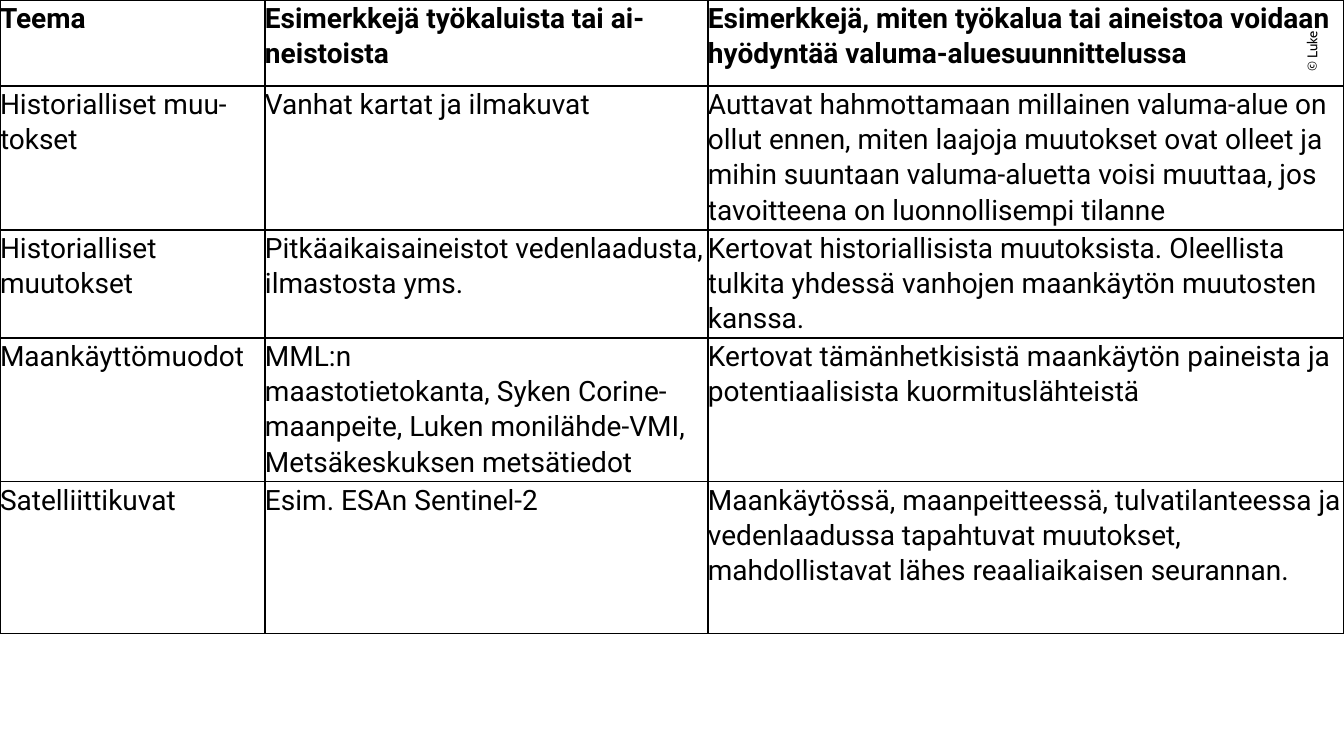
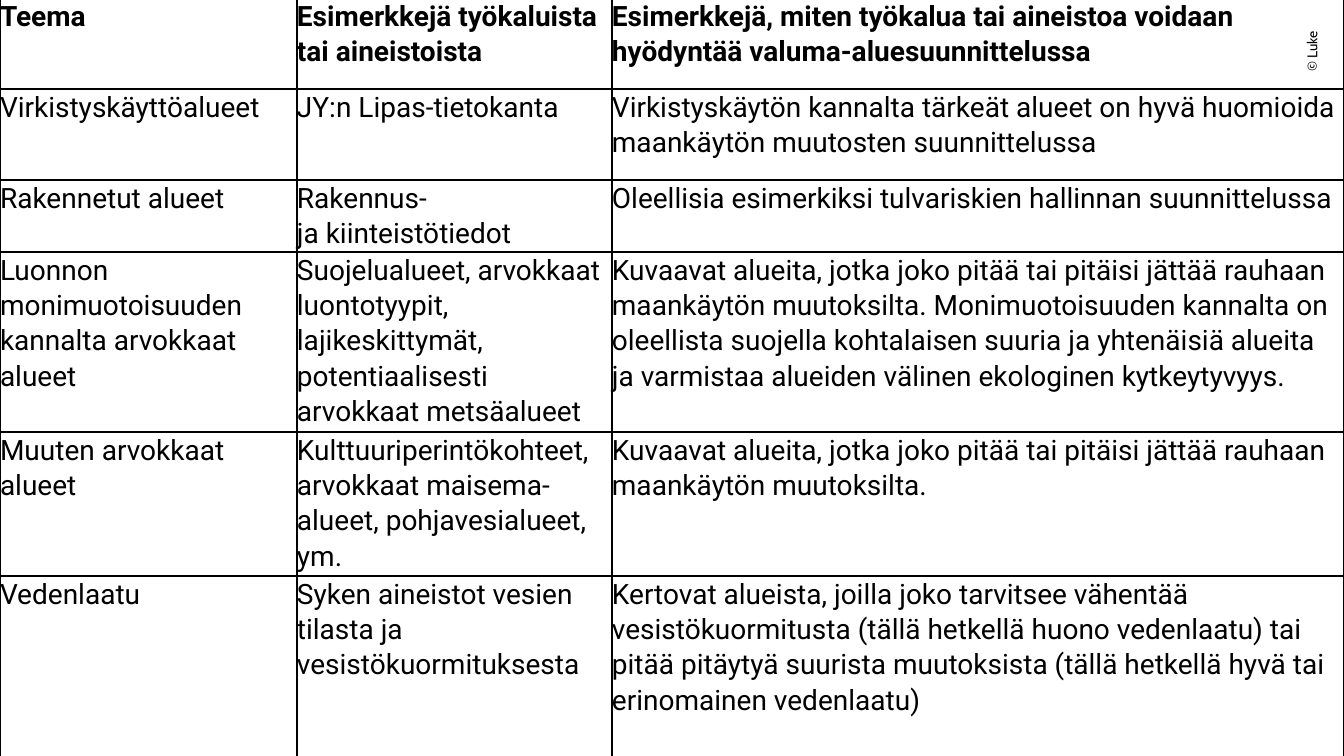
from lxml.etree import SubElement
from pptx import Presentation
from pptx.dml.color import RGBColor
from pptx.enum.text import MSO_ANCHOR, MSO_AUTO_SIZE, PP_ALIGN as Align
from pptx.oxml.ns import qn
from pptx.util import Emu, Pt

PX = 914400 / 100.8
SLIDE_W, SLIDE_H = 1344, 756
NBSP = chr(160)


class Theme:
    ink = "000000"
    paper = "FFFFFF"
    body_font, credit_font = "Roboto", "Cabin"
    body_size, credit_size = 20, 10
    border = 1
    line_spacing, space_after = 1.07, 8


# Content: "~" stands for a non-breaking space
CREDIT = "© Luke"
CREDIT_BOX = (1258, 62, 108, 27)
USE_HEADING = "Esimerkkejä, miten työkalua tai aineistoa voidaan hyödyntää valuma-aluesuunnittelussa"

TABLES = [
    {
        "top": 0,
        "cols": [265, 443, 636],
        "heights": [86, 144, 108, 143, 152],
        "rows": [
            ("Teema", "Esimerkkejä työkaluista tai ai-neistoista", USE_HEADING),
            ("Historialliset muu-tokset", "Vanhat kartat ja ilmakuvat",
             "Auttavat hahmottamaan millainen valuma-alue on ollut ennen, miten laajoja "
             "muutokset ovat olleet ja mihin suuntaan valuma-aluetta voisi muuttaa, jos "
             "tavoitteena on luonnollisempi tilanne"),
            ("Historialliset muutokset", "Pitkäaikaisaineistot vedenlaadusta, ilmastosta yms.",
             "Kertovat historiallisista muutoksista. Oleellista tulkita yhdessä vanhojen "
             "maankäytön muutosten kanssa."),
            ("Maankäyttömuodot",
             "MML:n maastotietokanta,~Syken~Corine-maanpeite, Luken monilähde-VMI, "
             "Metsäkeskuksen metsätiedot",
             "Kertovat tämänhetkisistä maankäytön paineista ja potentiaalisista "
             "kuormituslähteistä"),
            ("Satelliittikuvat", "Esim. ESAn Sentinel-2",
             "Maankäytössä, maanpeitteessä, tulvatilanteessa ja vedenlaadussa tapahtuvat "
             "muutokset, mahdollistavat lähes reaaliaikaisen seurannan."),
        ],
    },
    {
        "top": -2,
        "cols": [297, 315, 732],
        "heights": [91, 91, 72, 180, 144, 183],
        "rows": [
            ("Teema", "Esimerkkejä työkaluista tai aineistoista", USE_HEADING),
            ("Virkistyskäyttöalueet", "JY:n Lipas-tietokanta",
             "Virkistyskäytön kannalta tärkeät alueet on hyvä huomioida maankäytön "
             "muutosten suunnittelussa"),
            ("Rakennetut alueet", "Rakennus- ja~kiinteistötiedot",
             "Oleellisia esimerkiksi tulvariskien hallinnan suunnittelussa"),
            ("Luonnon monimuotoisuuden kannalta arvokkaat alueet",
             "Suojelualueet, arvokkaat luontotyypit, lajikeskittymät, potentiaalisesti "
             "arvokkaat metsäalueet",
             "Kuvaavat alueita, jotka joko pitää tai pitäisi jättää rauhaan maankäytön "
             "muutoksilta. Monimuotoisuuden kannalta on oleellista suojella kohtalaisen "
             "suuria ja yhtenäisiä alueita ja varmistaa alueiden välinen ekologinen "
             "kytkeytyvyys."),
            ("Muuten arvokkaat alueet",
             "Kulttuuriperintökohteet, arvokkaat maisema-alueet, pohjavesialueet, ym.",
             "Kuvaavat alueita, jotka joko pitää tai pitäisi jättää rauhaan maankäytön "
             "muutoksilta."),
            ("Vedenlaatu", "Syken aineistot vesien tilasta ja vesistökuormituksesta",
             "Kertovat alueista, joilla joko tarvitsee vähentää vesistökuormitusta (tällä "
             "hetkellä huono vedenlaatu) tai pitää pitäytyä suurista muutoksista (tällä "
             "hetkellä hyvä tai erinomainen vedenlaatu)"),
        ],
    },
]


def px(n):
    return Emu(round(n * PX))


def write(tf, text, *, font=Theme.body_font, size=Theme.body_size, bold=False,
          align=Align.LEFT, spacing=None, after=0):
    tf.word_wrap = True
    p = tf.paragraphs[0]
    p.alignment = align
    p.space_after = Pt(after)
    if spacing:
        p.line_spacing = spacing
    r = p.add_run()
    r.text = text.replace("~", NBSP)
    r.font.name, r.font.size, r.font.bold = font, Pt(size), bold
    r.font.color.rgb = RGBColor.from_string(Theme.ink)


def add_borders(cell):
    tc_pr = cell._tc.get_or_add_tcPr()
    for side in ("lnL", "lnR", "lnT", "lnB"):
        ln = SubElement(tc_pr, qn(f"a:{side}"), w=str(Pt(Theme.border)))
        fill = SubElement(ln, qn("a:solidFill"))
        SubElement(fill, qn("a:srgbClr"), val=Theme.ink)


def add_credit(s):
    sp = s.shapes.add_textbox(*map(px, CREDIT_BOX))
    sp.rotation = 270
    write(sp.text_frame, CREDIT, font=Theme.credit_font, size=Theme.credit_size,
          align=Align.RIGHT)
    sp.text_frame.auto_size = MSO_AUTO_SIZE.SHAPE_TO_FIT_TEXT


def add_grid(s, top, cols, heights, rows):
    table = s.shapes.add_table(len(rows), len(cols), 0, px(top),
                               px(sum(cols)), px(sum(heights))).table
    table.horz_banding = table.first_row = False
    for column, width in zip(table.columns, cols):
        column.width = px(width)
    for i, (height, texts) in enumerate(zip(heights, rows)):
        table.rows[i].height = px(height)
        for cell, text in zip(table.rows[i].cells, texts):
            cell.margin_left = cell.margin_right = cell.margin_top = cell.margin_bottom = 0
            cell.vertical_anchor = MSO_ANCHOR.TOP
            add_borders(cell)
            cell.fill.background()
            write(cell.text_frame, text, bold=i == 0,
                  spacing=Theme.line_spacing, after=Theme.space_after)


def main():
    prs = Presentation()
    prs.slide_width, prs.slide_height = px(SLIDE_W), px(SLIDE_H)
    for content in TABLES:
        s = prs.slides.add_slide(prs.slide_layouts[6])
        s.background.fill.solid()
        s.background.fill.fore_color.rgb = RGBColor.from_string(Theme.paper)
        add_credit(s)
        add_grid(s, **content)
    prs.save("out.pptx")


if __name__ == "__main__":
    main()
